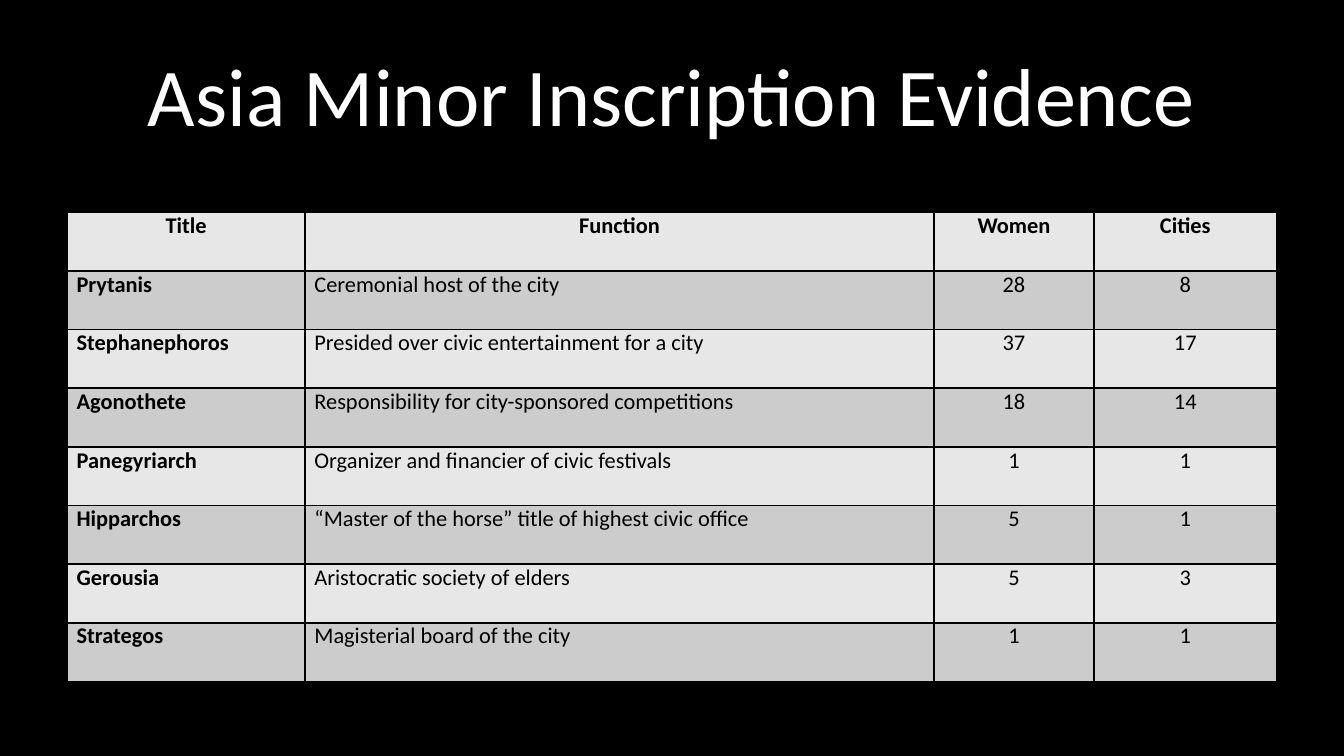
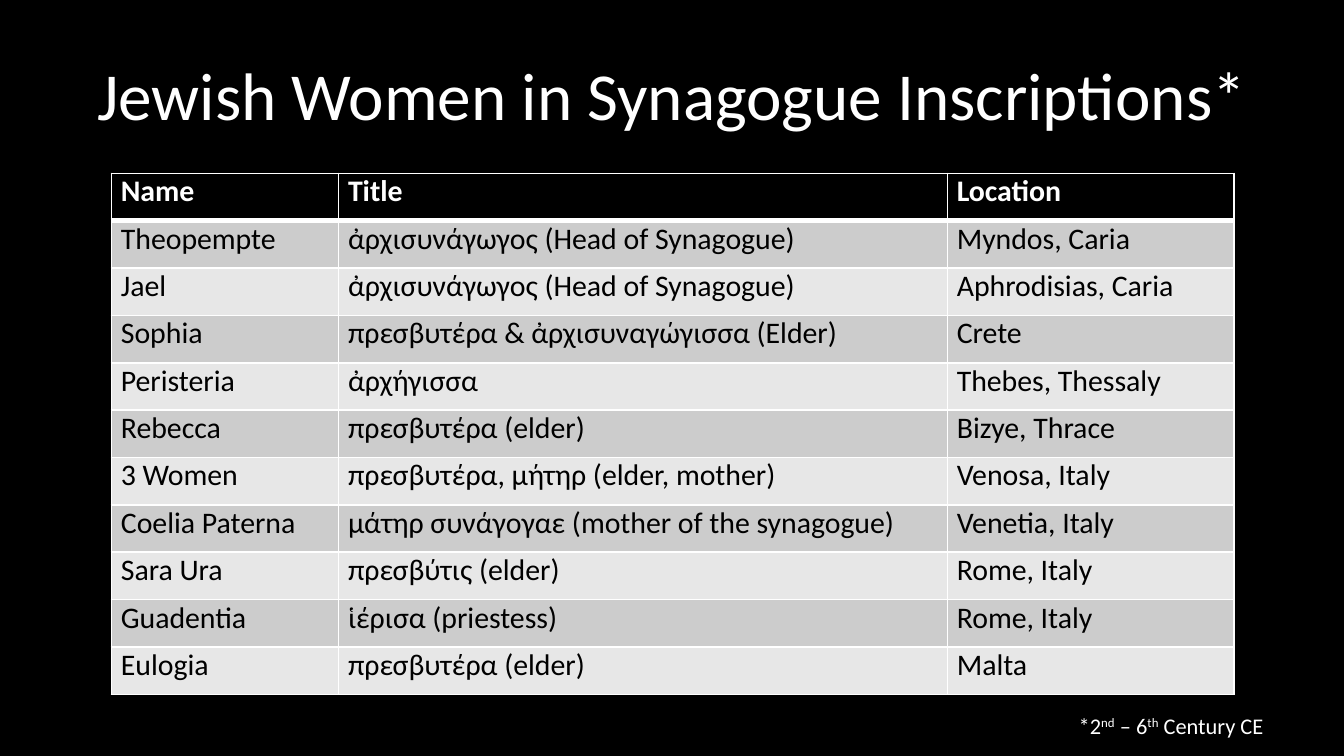
from dataclasses import dataclass

from lxml import etree
from pptx import Presentation
from pptx.dml.color import RGBColor
from pptx.enum import text
from pptx.oxml import ns
from pptx.util import Emu, Inches, Pt

LEFT, CENTER, RIGHT = text.PP_ALIGN.LEFT, text.PP_ALIGN.CENTER, text.PP_ALIGN.RIGHT


@dataclass(frozen=True)
class Theme:
    font: str = "Calibri"
    black: str = "000000"
    white: str = "FFFFFF"
    dark_band: str = "CCCCCC"
    light_band: str = "E7E7E7"
    large_title: int = 44
    title: int = 36
    large_cell: int = 16
    cell: int = 12
    note: int = 12
    rule: float = 1
    heavy_rule: float = 3


THEME = Theme()


@dataclass(frozen=True)
class TableStyle:
    size: int
    border: str
    header_fill: str
    header_color: str
    header_rule: float
    header_align: text.PP_ALIGN
    aligns: tuple[text.PP_ALIGN, ...]
    bold_first_column: bool


@dataclass(frozen=True)
class TableSlide:
    title: str
    title_size: int
    left: float
    top: float
    height: float
    widths: tuple[float, ...]
    style: TableStyle
    rows: tuple[tuple[str, ...], ...]
    note: tuple[tuple[str, bool], ...] = ()  # (text, superscript)


OFFICES = TableSlide(
    "Asia Minor Inscription Evidence", THEME.large_title,
    0.5, 1.58, 3.49, (1.77, 4.68, 1.19, 1.36),
    TableStyle(THEME.cell, THEME.black, THEME.light_band, THEME.black, THEME.rule,
               CENTER, (LEFT, LEFT, CENTER, CENTER), True),
    (
        ("Title", "Function", "Women", "Cities"),
        ("Prytanis", "Ceremonial host of the city", "28", "8"),
        ("Stephanephoros", "Presided over civic entertainment for a city", "37", "17"),
        ("Agonothete", "Responsibility for city-sponsored competitions", "18", "14"),
        ("Panegyriarch", "Organizer and financier of civic festivals", "1", "1"),
        ("Hipparchos", "“Master of the horse” title of highest civic office", "5", "1"),
        ("Gerousia", "Aristocratic society of elders", "5", "3"),
        ("Strategos", "Magisterial board of the city", "1", "1"),
    ),
)

SYNAGOGUES = TableSlide(
    "Jewish Women in Synagogue Inscriptions*", THEME.title,
    0.83, 1.29, 3.88, (1.69, 4.53, 2.13),
    TableStyle(THEME.large_cell, THEME.white, THEME.black, THEME.white, THEME.heavy_rule,
               LEFT, (LEFT, LEFT, LEFT), False),
    (
        ("Name", "Title", "Location"),
        ("Theopempte", "ἀρχισυνάγωγος (Head of Synagogue)", "Myndos, Caria"),
        ("Jael", "ἀρχισυνάγωγος (Head of Synagogue)", "Aphrodisias, Caria"),
        ("Sophia", "πρεσβυτέρα & ἀρχισυναγώγισσα (Elder)", "Crete"),
        ("Peristeria", "ἀρχήγισσα", "Thebes, Thessaly"),
        ("Rebecca", "πρεσβυτέρα (elder)", "Bizye, Thrace"),
        ("3 Women", "πρεσβυτέρα, μήτηρ (elder, mother)", "Venosa, Italy"),
        ("Coelia Paterna", "μάτηρ συνάγογαε (mother of the synagogue)", "Venetia, Italy"),
        ("Sara Ura", "πρεσβύτις (elder)", "Rome, Italy"),
        ("Guadentia", "ἱέρισα (priestess)", "Rome, Italy"),
        ("Eulogia", "πρεσβυτέρα (elder)", "Malta"),
    ),
    (("*2", False), ("nd", True), (" – 6", False), ("th", True), (" Century CE", False)),
)


def add_run(p, value: str, size: int, color: str, bold: bool = False):
    r = p.add_run()
    r.text = value
    r.font.name = THEME.font
    r.font.size = Pt(size)
    r.font.bold = bold
    r.font.color.rgb = RGBColor.from_string(color)
    return r


def set_borders(cell, color: str, top: float, bottom: float) -> None:
    tc_pr = cell._tc.get_or_add_tcPr()
    edges = {"lnL": THEME.rule, "lnR": THEME.rule, "lnT": top, "lnB": bottom}
    for tag, width in edges.items():
        ln = etree.SubElement(tc_pr, ns.qn(f"a:{tag}"), w=str(Pt(width)))
        fill = etree.SubElement(ln, ns.qn("a:solidFill"))
        etree.SubElement(fill, ns.qn("a:srgbClr"), val=color)


def add_title(slide, title: str, size: int) -> None:
    sp = slide.shapes.title
    sp.left, sp.top, sp.width, sp.height = map(Inches, (0.5, 0.23, 9, 0.94))
    tf = sp.text_frame
    tf.vertical_anchor = text.MSO_ANCHOR.MIDDLE
    p = tf.paragraphs[0]
    p.alignment = CENTER
    add_run(p, title, size, THEME.white)


def fill_cell(cell, value: str, row: int, col: int, style: TableStyle) -> None:
    header = row == 0
    cell.margin_left = cell.margin_right = Inches(0.07)
    cell.margin_top = cell.margin_bottom = 0
    # Both sides of the edge under the header carry its weight.
    set_borders(cell, style.border,
                style.header_rule if row == 1 else THEME.rule,
                style.header_rule if header else THEME.rule)
    band = THEME.dark_band if row % 2 else THEME.light_band
    cell.fill.solid()
    cell.fill.fore_color.rgb = RGBColor.from_string(style.header_fill if header else band)
    p = cell.text_frame.paragraphs[0]
    p.alignment = style.header_align if header else style.aligns[col]
    add_run(p, value, style.size, style.header_color if header else THEME.black,
            header or (style.bold_first_column and col == 0))


def add_data_table(slide, data: TableSlide) -> None:
    frame = slide.shapes.add_table(
        len(data.rows), len(data.widths), Inches(data.left), Inches(data.top),
        Inches(sum(data.widths)), Inches(data.height))
    table = frame.table
    table.horz_banding = False
    for column, width in zip(table.columns, data.widths):
        column.width = Inches(width)
    for i, values in enumerate(data.rows):
        table.rows[i].height = Emu(Inches(data.height) // len(data.rows))
        for j, value in enumerate(values):
            fill_cell(table.cell(i, j), value, i, j, data.style)


def add_note(slide, parts: tuple[tuple[str, bool], ...]) -> None:
    sp = slide.shapes.add_textbox(Inches(2.39), Inches(5.25), Inches(7.11), Inches(0.3))
    tf = sp.text_frame
    tf.word_wrap = True
    tf.auto_size = text.MSO_AUTO_SIZE.SHAPE_TO_FIT_TEXT
    p = tf.paragraphs[0]
    p.alignment = RIGHT
    for value, superscript in parts:
        r = add_run(p, value, THEME.note, THEME.white)
        if superscript:
            r.font._element.set("baseline", "30000")


def main() -> None:
    prs = Presentation()
    prs.slide_width = Inches(10)
    prs.slide_height = Emu(prs.slide_width * 9 // 16)
    background = prs.slide_master.background.fill
    background.solid()
    background.fore_color.rgb = RGBColor.from_string(THEME.black)
    title_only = prs.slide_layouts.get_by_name("Title Only")
    for data in (OFFICES, SYNAGOGUES):
        slide = prs.slides.add_slide(title_only)
        add_title(slide, data.title, data.title_size)
        add_data_table(slide, data)
        if data.note:
            add_note(slide, data.note)
    prs.save("out.pptx")


if __name__ == "__main__":
    main()
